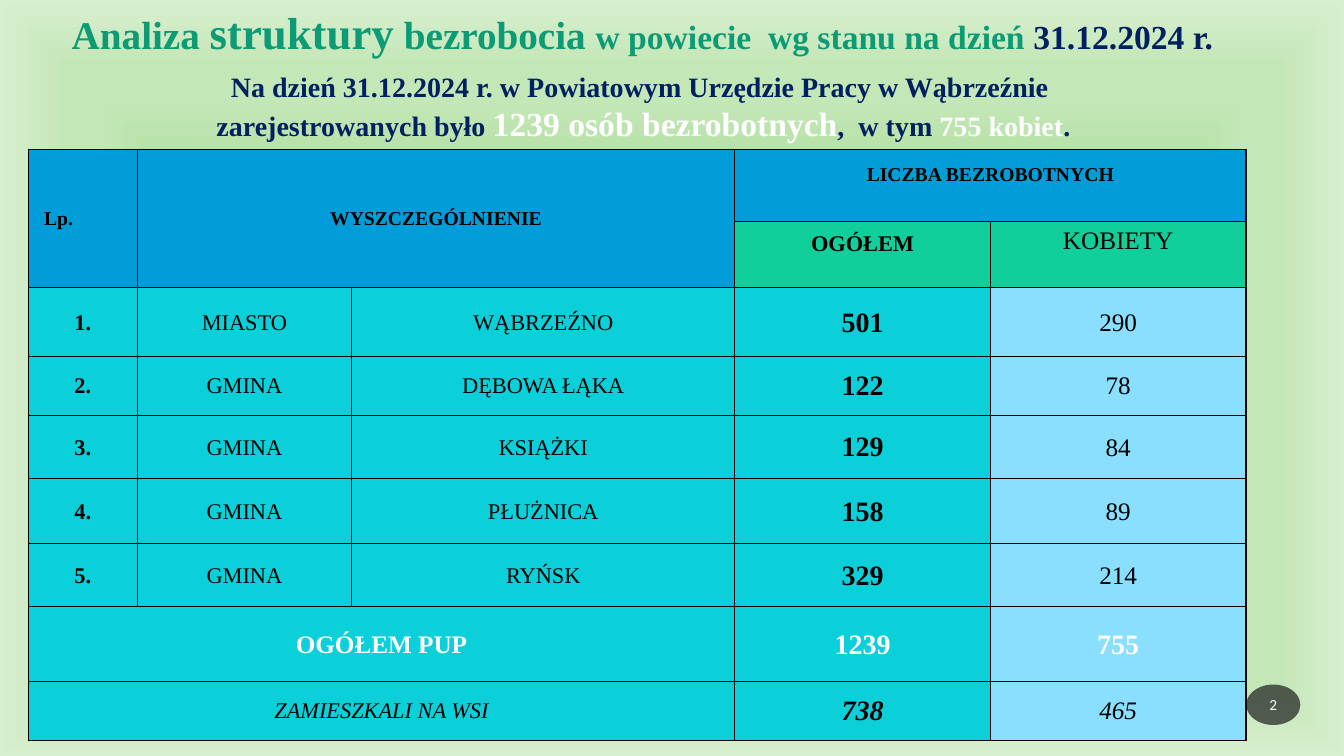
from dataclasses import dataclass

from lxml import etree
from pptx import Presentation
from pptx.dml.color import RGBColor
from pptx.enum.shapes import MSO_SHAPE
from pptx.enum.text import MSO_ANCHOR, MSO_AUTO_SIZE, PP_ALIGN
from pptx.oxml import parse_xml
from pptx.oxml.ns import nsdecls, qn
from pptx.util import Cm, Pt

CENTER, LEFT = PP_ALIGN.CENTER, PP_ALIGN.LEFT
TOP, MIDDLE = MSO_ANCHOR.TOP, MSO_ANCHOR.MIDDLE
ELLIPSE = MSO_SHAPE.OVAL
NO_FIT = MSO_AUTO_SIZE.NONE


@dataclass(frozen=True)
class Theme:
    font: str = "Times New Roman"
    number_font: str = "Calibri"
    white: str = "FFFFFF"
    black: str = "000000"
    navy: str = "002060"
    green: str = "0C9B74"
    header: str = "009DD9"
    subheader: str = "10CF9B"
    body: str = "0BD0D9"
    women: str = "8ADFFF"
    badge: str = "1D1D1D"
    backdrop: tuple = ((0, "7CCA62"), (74, "C4E7B8"), (83, "C4E7B8"), (100, "D8EFD0"))
    number: int = 11
    small: int = 14
    label: int = 16
    medium: int = 18
    large: int = 20
    accent: int = 24
    heading: int = 28
    key: int = 32


THEME = Theme()

COLUMNS = (2.75, 5.4, 9.66, 6.44, 6.44)
ROWS = (1.82, 1.67, 1.73, 1.48, 1.6, 1.63, 1.6, 1.88, 1.48)
AREAS = (
    ("1.", "MIASTO", "WĄBRZEŹNO", "501", "290"),
    ("2.", "GMINA", "DĘBOWA ŁĄKA", "122", "78"),
    ("3.", "GMINA", "KSIĄŻKI", "129", "84"),
    ("4.", "GMINA", "PŁUŻNICA", "158", "89"),
    ("5.", "GMINA", "RYŃSK", "329", "214"),
)


def add_span(para, text, size, color, bold=False, italic=False, font=THEME.font):
    span = para.add_run()
    span.text = text
    span.font.name = font
    span.font.size = Pt(size)
    span.font.bold = bold
    span.font.italic = italic
    span.font.color.rgb = RGBColor.from_string(color)


def place(shape, box):
    shape.left, shape.top, shape.width, shape.height = (Cm(length) for length in box)


def write_lines(shape, box, lines):
    """Fill a placeholder with centred bold lines of (text, size, colour) spans."""
    place(shape, box)
    frame = shape.text_frame
    frame.word_wrap = True
    frame.auto_size = NO_FIT
    frame.vertical_anchor = TOP
    for index, spans in enumerate(lines):
        para = frame.add_paragraph() if index else frame.paragraphs[0]
        para.alignment = CENTER
        para.space_before = Pt(0)
        properties = para._p.get_or_add_pPr()
        properties.set("marL", "0")
        properties.set("indent", "0")
        etree.SubElement(properties, qn("a:buNone"))
        for text, size, color in spans:
            add_span(para, text, size, color, bold=True)


def paint_background(page):
    page.background.fill.gradient()
    gradient = page.element.find(".//" + qn("a:gradFill"))
    stops = "".join(
        f'<a:gs pos="{position * 1000}"><a:srgbClr val="{color}"/></a:gs>'
        for position, color in THEME.backdrop
    )
    gradient.getparent().replace(gradient, parse_xml(
        f'<a:gradFill {nsdecls("a")} rotWithShape="1"><a:gsLst>{stops}</a:gsLst>'
        '<a:path path="rect"><a:fillToRect l="50000" t="50000" r="50000" b="50000"/>'
        '</a:path></a:gradFill>'))


def add_title(page, box):
    title = page.shapes.title
    write_lines(title, box, [[
        ("Analiza ", THEME.heading, THEME.green),
        ("struktury", THEME.key, THEME.green),
        (" bezrobocia ", THEME.heading, THEME.green),
        ("w powiecie  wg stanu na dzień ", THEME.accent, THEME.green),
        ("31.12.2024 r.", THEME.accent, THEME.navy),
    ]])
    title.text_frame.margin_left = Cm(0.53)


def add_summary(page, box):
    write_lines(page.placeholders[1], box, [
        [("Na dzień 31.12.2024 r. w Powiatowym Urzędzie Pracy w Wąbrzeźnie ",
          THEME.large, THEME.navy)],
        [("zarejestrowanych było ", THEME.large, THEME.navy),
         ("1239 osób bezrobotnych", THEME.accent, THEME.white),
         (",  w tym ", THEME.large, THEME.navy),
         ("755 kobiet", THEME.large, THEME.white),
         (".", THEME.large, THEME.navy)],
    ])


def style_cell(cell, fill):
    cell.fill.solid()
    cell.fill.fore_color.rgb = RGBColor.from_string(fill)
    cell.vertical_anchor = MIDDLE
    cell.margin_left = cell.margin_right = cell.margin_top = Cm(0.03)
    cell.margin_bottom = Cm(0)
    for index, side in enumerate(("lnL", "lnR", "lnT", "lnB")):
        cell._tc.get_or_add_tcPr().insert(index, parse_xml(
            f'<a:{side} {nsdecls("a")} w="{Pt(1)}"><a:solidFill>'
            f'<a:srgbClr val="{THEME.black}"/></a:solidFill></a:{side}>'))


def write_cell(cell, text, size, bold=False, italic=False, color=THEME.black):
    para = cell.text_frame.paragraphs[0]
    para.alignment = CENTER
    add_span(para, text, size, color, bold, italic)


def add_unemployment_table(page, box):
    table = page.shapes.add_table(
        len(ROWS), len(COLUMNS), *(Cm(length) for length in box)).table
    table.first_row = table.horz_banding = False
    for column, width in zip(table.columns, COLUMNS):
        column.width = Cm(width)
    for row, height in zip(table.rows, ROWS):
        row.height = Cm(height)

    # Fills and borders
    for row in range(len(ROWS)):
        for column in range(len(COLUMNS)):
            if row < 2:
                fill = THEME.subheader if row == 1 and column > 2 else THEME.header
            else:
                fill = THEME.women if column == 4 else THEME.body
            style_cell(table.cell(row, column), fill)

    # Merged areas
    for first, last in (((0, 0), (1, 0)), ((0, 1), (1, 2)), ((0, 3), (0, 4)),
                        ((7, 0), (7, 2)), ((8, 0), (8, 2))):
        table.cell(*first).merge(table.cell(*last))

    # Headers; the bottom margin raises the text in the right-hand ones
    for row, column, text, size, bold, bottom in (
            (0, 0, "Lp.", THEME.small, True, 0),
            (0, 1, "WYSZCZEGÓLNIENIE", THEME.small, True, 0),
            (0, 3, "LICZBA BEZROBOTNYCH", THEME.small, True, 0.55),
            (1, 3, "OGÓŁEM", THEME.label, True, 0.55),
            (1, 4, "KOBIETY", THEME.medium, False, 0.7)):
        cell = table.cell(row, column)
        write_cell(cell, text, size, bold)
        cell.margin_bottom = Cm(bottom)
    number_header = table.cell(0, 0)
    number_header.text_frame.paragraphs[0].alignment = LEFT
    number_header.margin_left = Cm(0.4)

    # Town and communes
    sizes = (THEME.label, THEME.label, THEME.label, THEME.large, THEME.medium)
    for row, area in enumerate(AREAS, start=2):
        for column, text in enumerate(area):
            write_cell(table.cell(row, column), text, sizes[column], column in (0, 3))

    # Totals
    for column, text, size in ((0, "OGÓŁEM PUP", THEME.medium),
                               (3, "1239", THEME.large), (4, "755", THEME.large)):
        write_cell(table.cell(7, column), text, size, True, color=THEME.white)
    for column, text in ((0, "ZAMIESZKALI NA WSI"), (3, "738"), (4, "465")):
        write_cell(table.cell(8, column), text, sizes[column], column == 3, italic=True)


def add_page_number(page, box):
    badge = page.shapes.add_shape(ELLIPSE, *(Cm(length) for length in box))
    badge.shadow.inherit = False
    badge.line.fill.background()
    badge.fill.solid()
    badge.fill.fore_color.rgb = RGBColor.from_string(THEME.badge)
    color = badge.element.spPr.find(".//" + qn("a:srgbClr"))
    etree.SubElement(color, qn("a:alpha")).set("val", "70000")
    frame = badge.text_frame
    frame.margin_left = frame.margin_right = Cm(0.05)
    frame.vertical_anchor = MIDDLE
    para = frame.paragraphs[0]
    para.alignment = CENTER
    add_span(para, "2", THEME.number, THEME.white, font=THEME.number_font)


def main():
    deck = Presentation()
    deck.slide_width, deck.slide_height = Cm(33.87), Cm(19.05)
    page = deck.slides.add_slide(deck.slide_layouts[1])
    paint_background(page)
    add_page_number(page, (31.41, 17.25, 1.36, 1.02))
    add_summary(page, (1.57, 1.63, 29.29, 2.13))
    add_title(page, (0.71, 0, 30.68, 1.63))
    add_unemployment_table(page, (0.71, 3.76, sum(COLUMNS), sum(ROWS)))
    deck.save("out.pptx")


if __name__ == "__main__":
    main()
